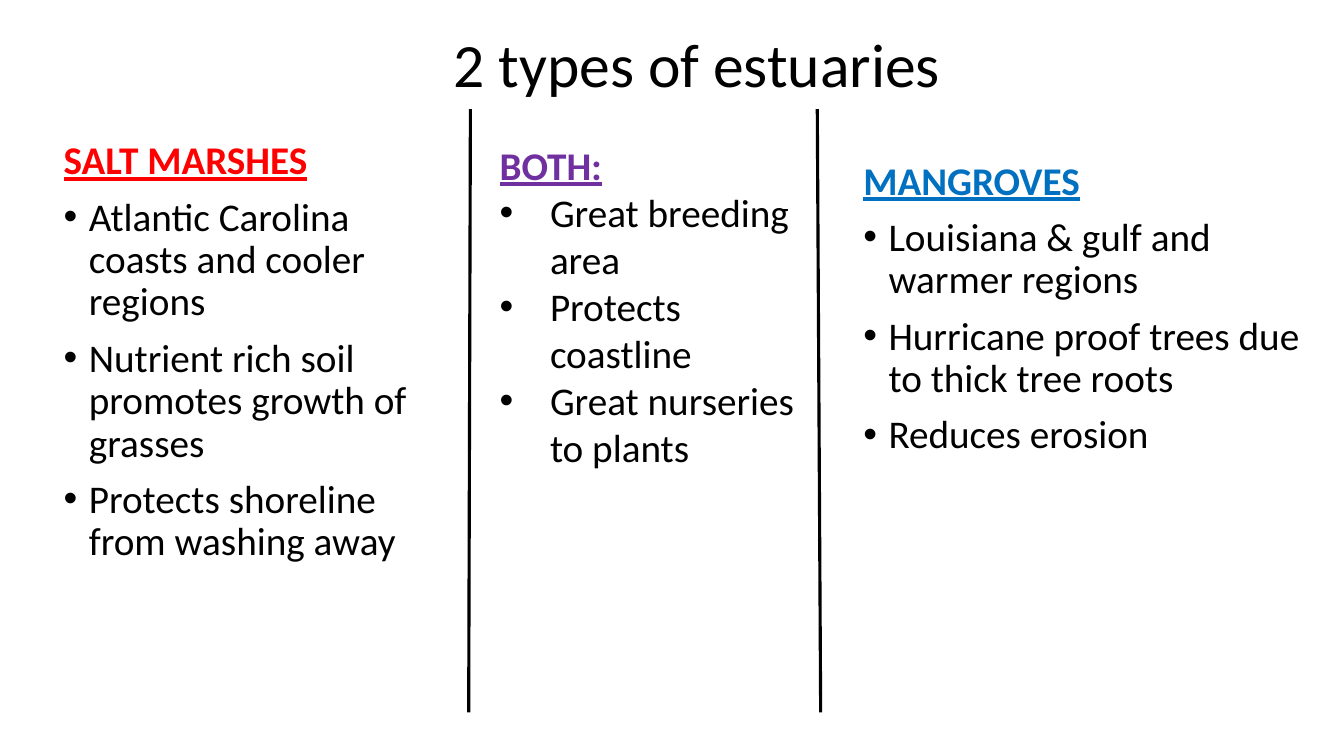
import pptx
import pptx.dml.color
import pptx.enum.shapes
import pptx.enum.text
import pptx.oxml
import pptx.oxml.ns
import pptx.util

COLORS = {
    "ink": "000000",
    "paper": "FFFFFF",
    "marsh": "FF0000",
    "both": "7030A0",
    "mangrove": "0070C0",
}
FONT = "Calibri"
COLUMNS, ROWS = 160, 90
WIDTH, HEIGHT = pptx.util.Inches(13.333), pptx.util.Inches(7.5)

TITLE_BOX = (38, 3, 90, 10)
TOPICS = [
    {
        "box": (6.4, 16.2, 47.6, 62), "heading": "SALT MARSHES", "color": "marsh",
        "indent": 0.25, "leading": 0.9, "gap": 10,
        "points": [
            "Atlantic Carolina coasts and cooler regions",
            "Nutrient rich soil promotes growth of grasses",
            "Protects shoreline from washing away",
        ],
    },
    {
        "box": (101.6, 18.6, 58.4, 57.1), "heading": "MANGROVES", "color": "mangrove",
        "indent": 0.25, "leading": 0.9, "gap": 10,
        "points": [
            "Louisiana & gulf and warmer regions",
            "Hurricane proof trees due to thick tree roots",
            "Reduces erosion",
        ],
    },
    {
        "box": (58.3, 16.2, 38.9, 40.8), "heading": "BOTH:", "color": "both",
        "indent": 0.5, "leading": 1.0, "gap": 0,
        "points": [
            "Great breeding area",
            "Protects coastline",
            "Great nurseries to plants",
        ],
    },
]
DIVIDERS = [(56, 13, 55.8, 84.8), (97.3, 13, 97.7, 84.8)]


def grid(left, top, right, bottom):
    """Turn two pairs of grid columns and rows into slide lengths."""
    column, row = WIDTH / COLUMNS, HEIGHT / ROWS
    return [round(count * unit) for count, unit in
            zip((left, top, right, bottom), (column, row, column, row))]


def rgb(name):
    """Return the named colour."""
    return pptx.dml.color.RGBColor.from_string(COLORS[name])


def add_span(para, text, size, color="ink", strong=False):
    """Add one run, bold and underlined when strong."""
    span = para.add_run()
    span.text = text
    span.font.name = FONT
    span.font.size = pptx.util.Pt(size)
    span.font.color.rgb = rgb(color)
    span.font.bold = strong
    span.font.underline = strong


def add_bullet(para, indent):
    """Give a paragraph a round bullet with a hanging indent."""
    properties = para._p.get_or_add_pPr()
    distance = pptx.util.Inches(indent)
    properties.set("marL", str(distance))
    properties.set("indent", str(-distance))
    for tag, key, value in (("a:buFont", "typeface", "Arial"), ("a:buChar", "char", "•")):
        mark = pptx.oxml.parse_xml(f"<{tag} {pptx.oxml.ns.nsdecls('a')}/>")
        mark.set(key, value)
        properties.append(mark)


def fill_title(page, box, text):
    """Place and format the title placeholder."""
    title = page.shapes.title
    title.left, title.top, title.width, title.height = grid(*box)
    frame = title.text_frame
    frame.word_wrap = True
    frame.auto_size = pptx.enum.text.MSO_AUTO_SIZE.NONE
    frame.vertical_anchor = pptx.enum.text.MSO_ANCHOR.MIDDLE
    para = frame.paragraphs[0]
    para.alignment = pptx.enum.text.PP_ALIGN.CENTER
    para.line_spacing = 0.9
    add_span(para, text, 44)


def add_topic(page, box, heading, color, indent, leading, gap, points):
    """Add a coloured heading with its bulleted points."""
    frame = page.shapes.add_textbox(*grid(*box)).text_frame
    frame.word_wrap = True
    for index, text in enumerate([heading] + points):
        para = frame.add_paragraph() if index else frame.paragraphs[0]
        para.line_spacing = leading
        para.space_before = pptx.util.Pt(gap)
        if index:
            add_bullet(para, indent)
            add_span(para, text, 28)
        else:
            add_span(para, text, 28, color, strong=True)


def add_divider(page, ends):
    """Draw a line between two topics."""
    line = page.shapes.add_connector(pptx.enum.shapes.MSO_CONNECTOR.STRAIGHT, *grid(*ends))
    line.line.color.rgb = rgb("ink")
    line.line.width = pptx.util.Pt(2.25)
    line._element.spPr.append(
        pptx.oxml.parse_xml(f"<a:effectLst {pptx.oxml.ns.nsdecls('a')}/>"))


def build_comparison(deck):
    """Add the slide that compares the two types of estuaries."""
    page = deck.slides.add_slide(deck.slide_layouts[5])
    page.background.fill.solid()
    page.background.fill.fore_color.rgb = rgb("paper")
    fill_title(page, TITLE_BOX, "2 types of estuaries")
    for topic in TOPICS:
        add_topic(page, **topic)
    for ends in DIVIDERS:
        add_divider(page, ends)


def main():
    """Build and save the deck."""
    deck = pptx.Presentation()
    deck.slide_width, deck.slide_height = WIDTH, HEIGHT
    build_comparison(deck)
    deck.save("out.pptx")


if __name__ == "__main__":
    main()
